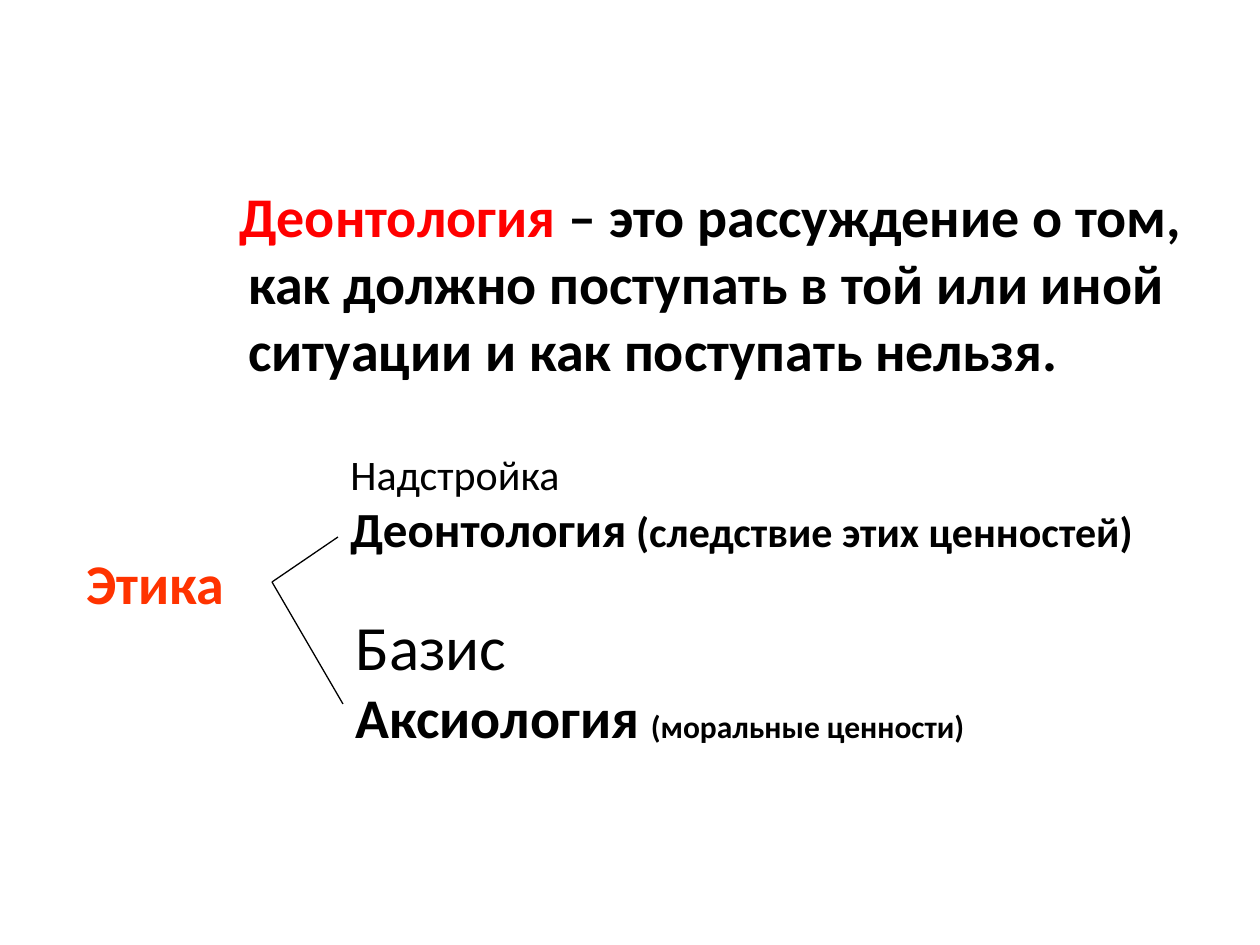
from pptx import Presentation
from pptx import util as u
from pptx.dml.color import RGBColor
from pptx.enum import shapes, text
from pptx.oxml.ns import qn
from lxml import etree

PX = u.Inches(1) // 126
BLACK, RED, ORANGE = "000000", "FF0000", "FF3300"


def px(length):
    return u.Emu(length * PX)


def color(value):
    return RGBColor.from_string(value)


def add_span(para, words, size=32, bold=True, fill=BLACK):
    span = para.add_run()
    span.text = words
    span.font.name = "Calibri"
    span.font.size = u.Pt(size)
    span.font.bold = bold
    span.font.color.rgb = color(fill)


def add_text(page, left, top, width, height, paragraphs, margin=0, indent=0):
    """Each paragraph is a list of (words, format) pairs."""
    box = page.shapes.add_textbox(px(left), px(top), px(width), px(height))
    frame = box.text_frame
    frame.word_wrap = True
    frame.vertical_anchor = text.MSO_ANCHOR.TOP
    for index, spans in enumerate(paragraphs):
        para = frame.add_paragraph() if index else frame.paragraphs[0]
        properties = para._p.get_or_add_pPr()
        properties.set("marL", str(px(margin)))
        properties.set("indent", str(px(indent)))
        for words, style in spans:
            add_span(para, words, **style)


def add_branch(page, start, end):
    line = page.shapes.add_connector(
        shapes.MSO_CONNECTOR.STRAIGHT, *map(px, start + end))
    line.line.color.rgb = color(BLACK)
    line.line.width = u.Pt(0.75)
    etree.SubElement(line._element.spPr, qn("a:effectLst"))


def main():
    deck = Presentation()
    deck.slide_width, deck.slide_height = px(1260), px(945)
    page = deck.slides.add_slide(deck.slide_layouts[6])

    add_text(page, 189, 175, 1071, 567, [[
        ("Деонтология ", {"fill": RED}),
        ("– это рассуждение о том, как должно поступать в той или иной "
         "ситуации и как поступать нельзя.", {}),
    ]], margin=47, indent=-9)
    add_text(page, 74, 542, 198, 79, [[("Этика", {"fill": ORANGE})]])
    add_text(page, 338, 442, 922, 189, [
        [("Надстройка", {"size": 24, "bold": False})],
        [("Деонтология", {"size": 28}),
         (" (следствие этих ценностей)", {"size": 24})],
    ])
    add_text(page, 343, 601, 702, 205, [
        [("Базис", {"size": 36, "bold": False})],
        [("Аксиология", {}), (" ", {"size": 28}),
         ("(моральные ценности)", {"size": 18})],
    ])

    for end in ((338, 537), (343, 704)):
        add_branch(page, (272, 582), end)

    deck.save("out.pptx")


if __name__ == "__main__":
    main()
